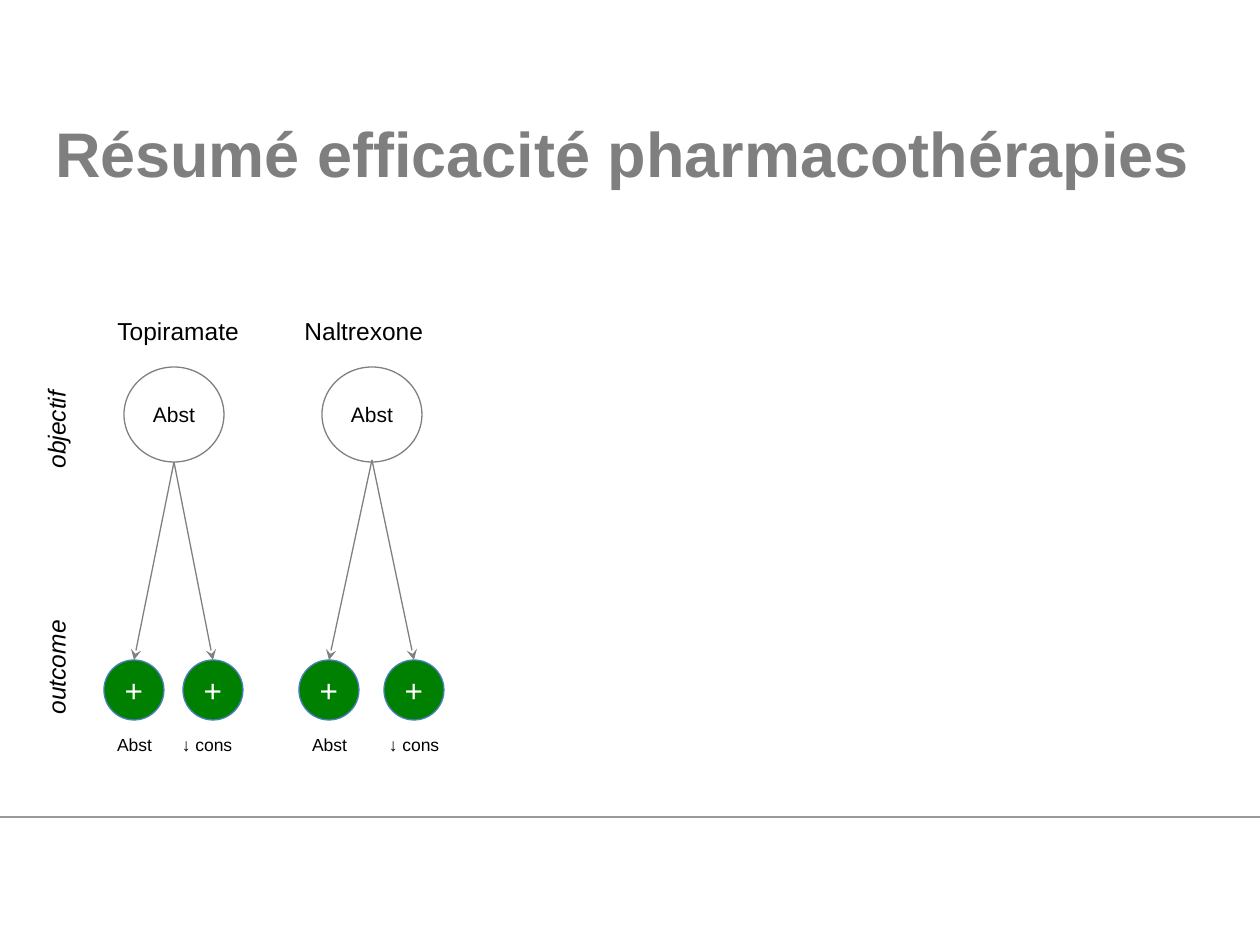
"""Build the slide summarising the efficacy of two pharmacotherapies."""
import pptx
import pptx.dml.color
import pptx.enum.shapes
import pptx.enum.text
import pptx.oxml
import pptx.util
from lxml import etree

PX = 914400 // 126
NS = "http://schemas.openxmlformats.org/drawingml/2006/main"
MSO = pptx.enum.shapes.MSO_SHAPE
CENTER = pptx.enum.text.PP_ALIGN.CENTER
LEFT = pptx.enum.text.PP_ALIGN.LEFT
MIDDLE = pptx.enum.text.MSO_ANCHOR.MIDDLE


def rgb(value):
    return pptx.dml.color.RGBColor.from_string(value)


def write(sp, text, size, color="000000", align=LEFT):
    tf = sp.text_frame
    tf.text = text
    p = tf.paragraphs[0]
    p.alignment = align
    p.font.name = "Arial"
    p.font.size = pptx.util.Pt(size)
    p.font.color.rgb = rgb(color)
    return tf


prs = pptx.Presentation()
prs.slide_width, prs.slide_height = 1260 * PX, 945 * PX
s = prs.slides.add_slide(prs.slide_layouts[5])

title = s.shapes.title
title.left, title.top, title.width, title.height = 55 * PX, 73 * PX, 1166 * PX, 158 * PX
tf = write(title, "Résumé efficacité pharmacothérapies", 36, "7F7F7F")
tf.margin_left = tf.margin_right = tf.margin_top = tf.margin_bottom = 0
tf.vertical_anchor = MIDDLE
tf.paragraphs[0].font.bold = True

for text, top, height in [("objectif", 384, 97), ("outcome", 614, 113)]:
    sp = s.shapes.add_textbox(35 * PX, top * PX, 55 * PX, height * PX)
    tf = write(sp, text, 14)
    tf.word_wrap = False
    tf.paragraphs[0].font.italic = True
    sp._element.txBody.bodyPr.set("vert", "vert270")

ovals = []
lines = [(0, 817, 1260, 817, "999999", False)]
drugs = [
    ("Topiramate", 105, 147, 174, 462, [("Abst", 134, 134, 79), ("↓ cons", 213, 207, 126)]),
    ("Naltrexone", 292, 145, 372, 460, [("Abst", 329, 329, 79), ("↓ cons", 414, 414, 126)]),
]
for drug, left, width, cx, start, outcomes in drugs:
    sp = s.shapes.add_textbox(left * PX, 310 * PX, width * PX, 43 * PX)
    write(sp, drug, 14).word_wrap = False
    ovals.append(("Abst", cx, 367, 100, 95, "FFFFFF", "808080", 12, "000000"))
    for label, x, label_x, label_w in outcomes:
        ovals.append(("+", x, 660, 60, 60, "008000", "4B7EBC", 18, "FFFFFF"))
        lines.append((cx, start, x, 660, "808080", True))
        sp = s.shapes.add_textbox((label_x - label_w // 2) * PX, 728 * PX, label_w * PX, 34 * PX)
        write(sp, label, 10, align=CENTER).word_wrap = True

for text, cx, top, width, height, fill, outline, size, color in ovals:
    sp = s.shapes.add_shape(MSO.OVAL, (cx - width // 2) * PX, top * PX, width * PX, height * PX)
    sp.shadow.inherit = False
    sp.fill.solid()
    sp.fill.fore_color.rgb = rgb(fill)
    sp.line.color.rgb = rgb(outline)
    sp.line.width = pptx.util.Pt(0.75)
    tf = write(sp, text, size, color, CENTER)
    tf.margin_left = tf.margin_right = 0
    tf.vertical_anchor = MIDDLE

for x1, y1, x2, y2, color, arrow in lines:
    line = s.shapes.add_connector(
        pptx.enum.shapes.MSO_CONNECTOR.STRAIGHT, x1 * PX, y1 * PX, x2 * PX, y2 * PX)
    line.line.color.rgb = rgb(color)
    line.line.width = pptx.util.Pt(0.75)
    if arrow:
        etree.SubElement(line.line._get_or_add_ln(), f"{{{NS}}}tailEnd", type="stealth")
    etree.SubElement(line._element.spPr, f"{{{NS}}}effectLst")

prs.save("out.pptx")
